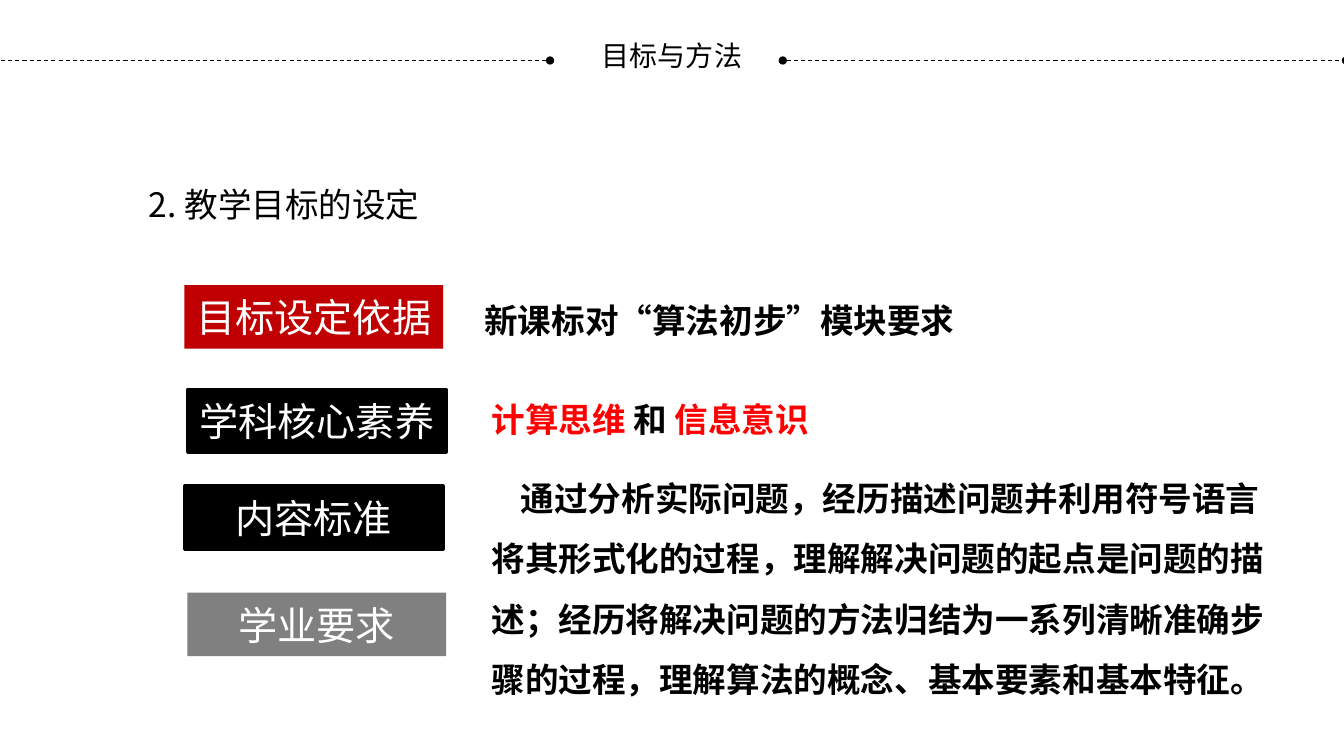
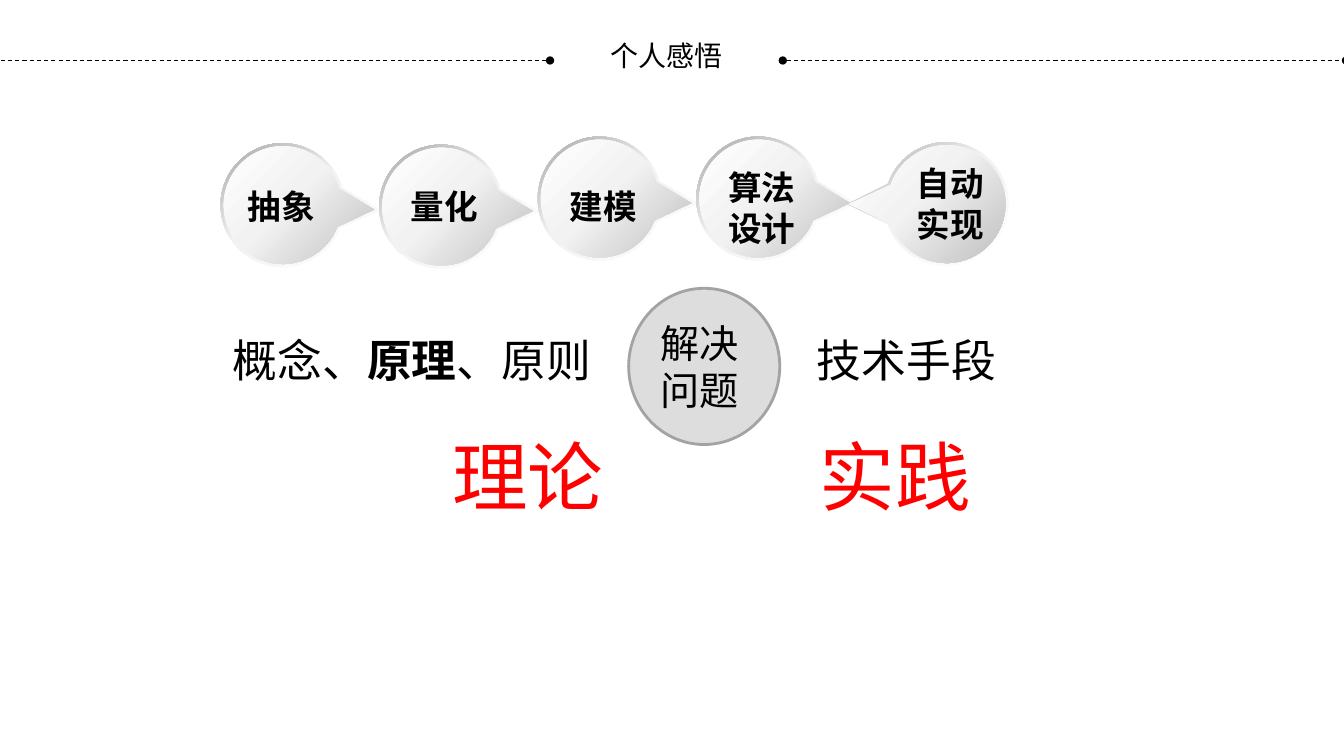
"""Build two lesson slides: teaching goals, and a chain of problem-solving steps."""
from math import cos, radians, sin, tan

from lxml.etree import SubElement
from pptx import Presentation
from pptx.dml.color import RGBColor as RGB
from pptx.enum.dml import MSO_LINE_DASH_STYLE as DASH
from pptx.enum.lang import MSO_LANGUAGE_ID as LANG
from pptx.enum.shapes import MSO_CONNECTOR as CONNECTOR, MSO_SHAPE as SHAPE
from pptx.enum.text import MSO_ANCHOR as ANCHOR, PP_ALIGN as ALIGN
from pptx.oxml.ns import qn
from pptx.util import Inches, Pt

COLS, ROWS = 133.4, 75
CJK, LATIN = "Noto Sans CJK SC", "Calibri"
COLORS = {
    "ink": "000000", "paper": "FFFFFF", "red": "FF0000", "brick": "C00000",
    "grey": "808080", "disc": "DDDDDD", "rim": "A3A3A3",
    "pale": "F2F2F2", "shade": "BFBFBF", "dark": "A6A6A6",
}


def cell(n):
    """Turn a count of grid columns or rows into a length."""
    return Inches(n / 10)


def color(name):
    """Look up a colour by its name."""
    return RGB.from_string(COLORS[name])


def write(tf, runs, size, font=CJK, ink="ink", bold=False, align=ALIGN.LEFT,
          anchor=ANCHOR.TOP, indent=0, spacing=None, wrap=True):
    """Fill a frame with one paragraph of (text, ink, bold) runs or a plain string."""
    tf.word_wrap, tf.vertical_anchor = wrap, anchor
    p = tf.paragraphs[0]
    p.alignment, p.line_spacing = align, spacing
    if indent:
        pPr = p._p.get_or_add_pPr()
        pPr.set("marL", "0")
        pPr.set("indent", str(cell(indent)))
    if isinstance(runs, str):
        runs = [(runs, ink, bold)]
    for text, run_ink, run_bold in runs:
        r = p.add_run()
        r.text = text
        r.font.name, r.font.size, r.font.bold = font, Pt(size), run_bold
        r.font.language_id = LANG.SIMPLIFIED_CHINESE
        r.font.color.rgb = color(run_ink)
        SubElement(r._r.get_or_add_rPr(), qn("a:ea")).set("typeface", CJK)


def add_text(shapes, box, runs, size, **style):
    """Add a text box at (left, top, width, height) in grid cells."""
    write(shapes.add_textbox(*map(cell, box)).text_frame, runs, size, **style)


def add_block(slide, kind, box, text, fill, line=None, **style):
    """Add a filled preset shape with 28 pt text in the middle."""
    sp = slide.shapes.add_shape(kind, *map(cell, box))
    sp.shadow.inherit = False
    sp.fill.solid()
    sp.fill.fore_color.rgb = color(fill)
    if line:
        sp.line.color.rgb = color(line)
        sp.line.width = Pt(2)
    else:
        sp.line.fill.background()
    write(sp.text_frame, text, 28, anchor=ANCHOR.MIDDLE, **style)


def add_rule(slide, start, end):
    """Add a dashed header rule with a dot at each end."""
    rule = slide.shapes.add_connector(
        CONNECTOR.STRAIGHT, cell(start), cell(6), cell(end), cell(6))
    rule.line.color.rgb = color("ink")
    rule.line.width = Pt(0.75)
    rule.line.dash_style = DASH.DASH
    for tag in ("a:headEnd", "a:tailEnd"):
        SubElement(rule.line._ln, qn(tag)).set("type", "oval")
    SubElement(rule._element.spPr, qn("a:effectLst"))


def add_header(slide, title, middle):
    """Add the title between its two rules."""
    add_text(slide.shapes, (middle - 9.45, 2.9, 18.9, 5.1), title, 20,
             align=ALIGN.CENTER, anchor=ANCHOR.MIDDLE)
    add_rule(slide, -1, 54.6)
    add_rule(slide, 77.7, 133.6)


def set_gradient(sp, stops, angle):
    """Give a shape a linear gradient of (percent, colour) stops."""
    sp.fill.gradient()
    grad = sp._element.spPr.find(qn("a:gradFill"))
    for child in list(grad):
        grad.remove(child)
    gs_list = SubElement(grad, qn("a:gsLst"))
    for percent, name in stops:
        gs = SubElement(gs_list, qn("a:gs"), pos=str(percent * 1000))
        SubElement(gs, qn("a:srgbClr"), val=COLORS[name])
    SubElement(grad, qn("a:lin"), ang=str(angle * 60000), scaled="0")


def add_balloon(shapes, centre, radius, reach, heading, stops, angle):
    """Add a disc with a pointer that ends at the given reach and heading."""
    def point(along, degrees, across=0):
        """Return a point by its distances along and across a direction, in EMU."""
        turn = radians(heading + degrees)
        return (cell(centre[0] + along * cos(turn) - across * sin(turn)),
                cell(centre[1] + along * sin(turn) + across * cos(turn)))

    knots = (19, 90, 180, 270, 341)
    builder = shapes.build_freeform(*point(reach, 0))
    builder.add_line_segments([point(radius, d) for d in knots])
    sp = builder.convert_to_shape()
    sides = list(sp._element.iter(qn("a:lnTo")))[1:]
    for side, start, end in zip(sides, knots, knots[1:]):
        handle = radius * 4 / 3 * tan(radians(end - start) / 4)
        curve = side.makeelement(qn("a:cubicBezTo"))
        for x, y in (point(radius, start, handle), point(radius, end, -handle),
                     point(radius, end)):
            SubElement(curve, qn("a:pt"), x=str(x - sp.left), y=str(y - sp.top))
        side.getparent().replace(side, curve)
    sp.shadow.inherit = False
    sp.line.fill.background()
    set_gradient(sp, stops, angle)


def add_step(slide, text, centre, label, heading=2.8, reach=9.1):
    """Add one step: a shaded rim, a lighter face and its bold label."""
    shapes = slide.shapes
    add_balloon(shapes, centre, 6.15, 9.8, heading,
                [(0, "paper"), (55, "pale"), (100, "dark")], 235)
    add_balloon(shapes, centre, 5.85, reach, heading,
                [(0, "paper"), (45, "pale"), (100, "shade")], 45)
    height = 5 if len(text) == 2 else 9.1
    add_text(shapes, (*label, 10, height), text, 24, bold=True, align=ALIGN.CENTER)


def build_goals(slide):
    """Lay out the slide on setting teaching goals."""
    add_header(slide, "目标与方法", 66.7)
    add_text(slide.shapes, (13.8, 17.8, 73.2, 7.8), "2. 教学目标的设定", 24)
    for text, left, top, fill, line in (
        ("目标设定依据", 18.3, 28.3, "brick", None),
        ("学科核心素养", 18.6, 38.6, "ink", "ink"),
        ("内容标准", 18.3, 48.2, "ink", "ink"),
        ("学业要求", 18.6, 58.8, "grey", None),
    ):
        add_block(slide, SHAPE.RECTANGLE, (left, top, 25.7, 6.3), text, fill, line,
                  font=LATIN, ink="paper", align=ALIGN.CENTER)
    literacy = [("计算思维 ", "red", True), ("和 ", "ink", True), ("信息意识", "red", True)]
    standard = ("通过分析实际问题，经历描述问题并利用符号语言将其形式化的过程，"
                "理解解决问题的起点是问题的描述；经历将解决问题的方法归结为一系列"
                "清晰准确步骤的过程，理解算法的概念、基本要素和基本特征。")
    for box, runs, align, wrap in (
        ((44.2, 27.3, 66.7, 6.4), "新课标对“算法初步”模块要求", ALIGN.JUSTIFY, True),
        ((44.9, 37.1, 36.8, 6.4), literacy, ALIGN.JUSTIFY, False),
        ((47.8, 44.9, 79.5, 25.2), standard, ALIGN.LEFT, True),
    ):
        add_text(slide.shapes, box, runs, 24, font=LATIN, bold=True, align=align,
                 indent=2.9, spacing=1.5, wrap=wrap)


def build_insight(slide):
    """Lay out the slide on theory, practice and problem solving."""
    add_header(slide, "个人感悟", 66.2)
    for i, (text, row, label) in enumerate((
        ("抽象", 20.35, (22.9, 18)), ("量化", 20.5, (39.1, 18)),
        ("建模", 19.7, (54.9, 18)), ("算法设计", 19.7, (70.6, 16.1)),
    )):
        add_step(slide, text, (28.05 + 15.74 * i, row), label)
    add_step(slide, "自动实现", (93.95, 20.25), (89.3, 15.7), heading=180, reach=9.7)
    theory = [("概念、", "ink", False), ("原理", "ink", True), ("、原则", "ink", False)]
    for left, width, runs in ((22.1, 37.9, theory), (80.1, 20, "技术手段")):
        add_text(slide.shapes, (left, 32.5, width, 6.4), runs, 32, wrap=False)
    for left, text in ((43.9, "理论"), (80.4, "实践")):
        add_text(slide.shapes, (left, 42.2, 22, 10.1), text, 54, ink="red")
    add_block(slide, SHAPE.OVAL, (62.4, 28.6, 15, 15.5), "解决问题", "disc", "rim")


def main():
    """Build and save the presentation."""
    prs = Presentation()
    prs.slide_width, prs.slide_height = cell(COLS), cell(ROWS)
    for build in (build_goals, build_insight):
        build(prs.slides.add_slide(prs.slide_layouts[6]))
    prs.save("out.pptx")


if __name__ == "__main__":
    main()
